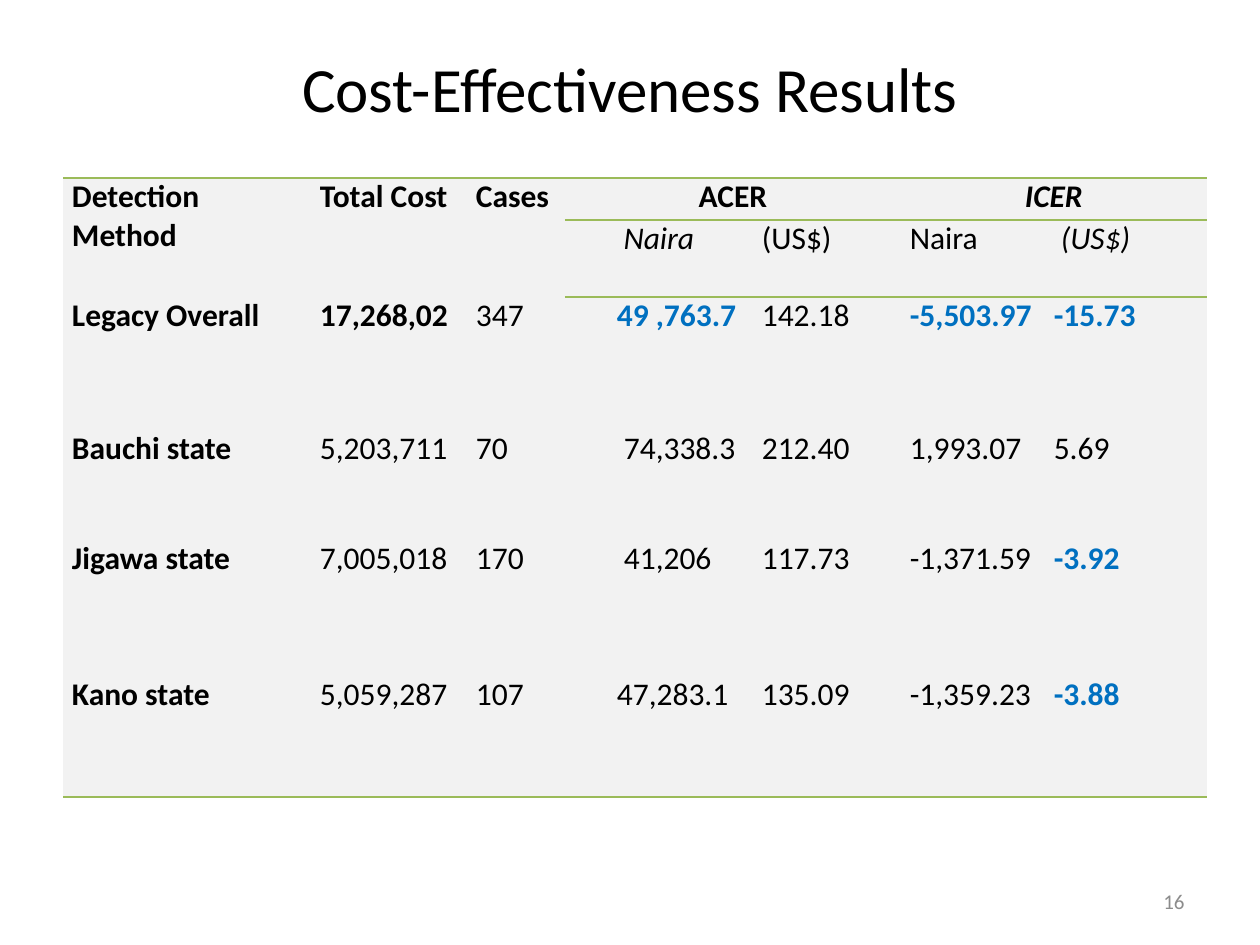
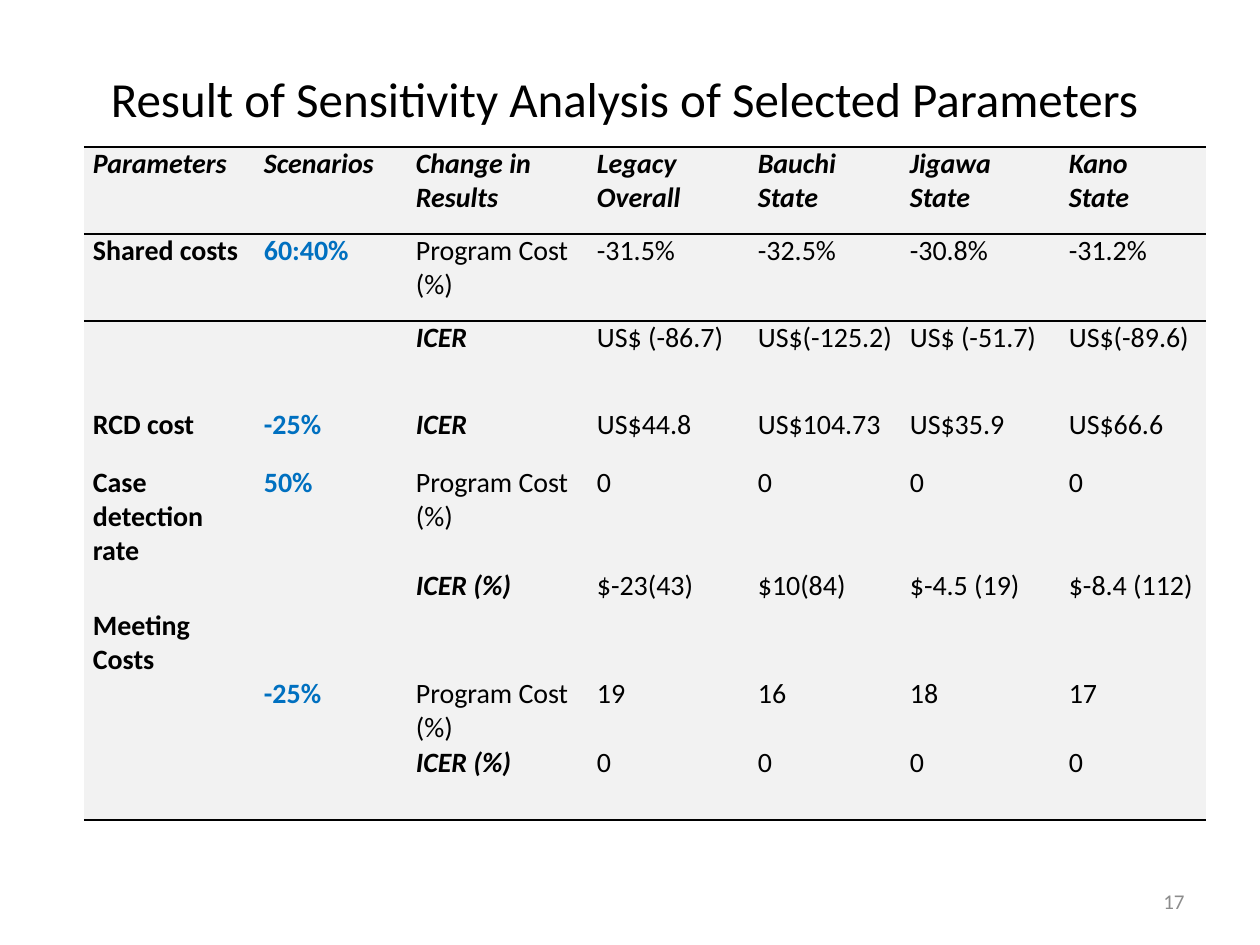
import pptx
import pptx.dml.color
import pptx.enum.text
import pptx.oxml
import pptx.oxml.ns
import pptx.util

PX = 914400 / 126
FONT = "Calibri"
BLACK, BLUE, GRAY, PALE, GREEN = "000000", "0070C0", "8C8C8C", "F2F2F2", "9BBB59"
NO_STYLE = "{2D5ABB26-0587-4C30-8999-92F81FD0307C}"
ALIGN = pptx.enum.text.PP_ALIGN
MIDDLE = pptx.enum.text.MSO_ANCHOR.MIDDLE


def px(length):
    return pptx.util.Emu(round(length * PX))


def add_run(para, text, size, color, style=""):
    run = para.add_run()
    run.text = text
    run.font.name = FONT
    run.font.size = pptx.util.Pt(size)
    run.font.bold = "b" in style
    run.font.italic = "i" in style
    run.font.color.rgb = pptx.dml.color.RGBColor.from_string(color)


# Cell text may end in "|" and style letters: b bold, i italic, u blue.
cost_rows = [
    ["Detection Method|b", "Total Cost|b", "Cases|b", "ACER|b", "", "ICER|bi", ""],
    ["", "", "", "Naira|i", "(US$)", "Naira", "(US$)|i"],
    ["Legacy Overall|b", "17,268,02|b", "347", "49 ,763.7|bu", "142.18", "-5,503.97|bu", "-15.73|bu"],
    ["Bauchi state|b", "5,203,711", "70", "74,338.3", "212.40", "1,993.07", "5.69"],
    ["Jigawa state|b", "7,005,018", "170", "41,206", "117.73", "-1,371.59", "-3.92|bu"],
    ["Kano state|b", "5,059,287", "107", "47,283.1", "135.09", "-1,359.23", "-3.88|bu"],
]
sensitivity_rows = [
    ["Parameters|bi", "Scenarios|bi", "Change in Results|bi", "Legacy\nOverall|bi",
     "Bauchi\nState|bi", "Jigawa\nState|bi", "Kano\nState|bi"],
    ["Shared costs|b", "60:40%|bu", "Program Cost (%)", "-31.5%", "-32.5%", "-30.8%", "-31.2%"],
    ["", "", "ICER|bi", "US$ (-86.7)", "US$(-125.2)", "US$ (-51.7)", "US$(-89.6)"],
    ["RCD cost|b", "-25%|bu", "ICER|bi", "US$44.8", "US$104.73", "US$35.9", "US$66.6"],
    ["Case detection rate|b", "50%|bu", "Program Cost (%)", "0", "0", "0", "0"],
    ["", "", "ICER (%)|bi", "$-23(43)", "$10(84)", "$-4.5 (19)", "$-8.4 (112)"],
    ["Meeting Costs|b", "", "", "", "", "", ""],
    ["", "-25%|bu", "Program Cost (%)", "19", "16", "18", "17"],
    ["", "", "ICER (%)|bi", "0", "0", "0", "0"],
    [""] * 7,
]
pages = [
    {
        "number": "16", "title": "Cost-Effectiveness Results", "title_size": 36, "title_height": 98,
        "left": 63, "top": 178, "size": 18, "rows": cost_rows,
        "widths": [248, 156, 98, 188, 148, 144, 162], "heights": [42, 68, 133, 110, 136, 121],
        "line": GREEN, "ruled_columns": range(3, 7), "align": ALIGN.JUSTIFY,
        "merges": [(0, 0, 1, 0), (0, 1, 1, 1), (0, 2, 1, 2), (0, 3, 0, 4), (0, 5, 0, 6)],
        "centered": [(0, 3), (0, 5), (1, 3)],
        "indents": {(1, 6): 7, (2, 3): 43, (3, 3): 50, (4, 3): 50, (5, 3): 43},
    },
    {
        "number": "17", "title": "Result of Sensitivity Analysis of Selected Parameters ",
        "title_size": 28, "title_height": 120,
        "left": 84, "top": 147, "size": 16, "rows": sensitivity_rows,
        "widths": [171, 152, 181, 161, 152, 159, 146],
        "heights": [87, 87, 87, 58, 102, 40, 68, 68, 40, 34],
        "line": BLACK, "ruled_columns": range(7), "align": ALIGN.LEFT,
        "merges": [], "centered": [], "indents": {},
    },
]

deck = pptx.Presentation()
deck.slide_width, deck.slide_height = px(1260), px(945)

for page in pages:
    slide = deck.slides.add_slide(deck.slide_layouts[5])
    title = slide.shapes.title
    title.left, title.top, title.width, title.height = px(63), px(38), px(1134), px(page["title_height"])
    title.text_frame.auto_size = pptx.enum.text.MSO_AUTO_SIZE.NONE
    title.text_frame.vertical_anchor = MIDDLE
    para = title.text_frame.paragraphs[0]
    para.alignment = ALIGN.CENTER
    add_run(para, page["title"], page["title_size"], BLACK)

    rows, widths, heights = page["rows"], page["widths"], page["heights"]
    frame = slide.shapes.add_table(len(rows), len(widths), px(page["left"]), px(page["top"]),
                                   px(sum(widths)), px(sum(heights)))
    table = frame.table
    table.first_row = table.horz_banding = False
    table._tbl.tblPr.find(pptx.oxml.ns.qn("a:tableStyleId")).text = NO_STYLE
    for column, width in zip(table.columns, widths):
        column.width = px(width)
    for row, height in zip(table.rows, heights):
        row.height = px(height)

    for row_index, row in enumerate(rows):
        for column_index, entry in enumerate(row):
            place = (row_index, column_index)
            cell = table.cell(*place)
            cell.margin_left = cell.margin_right = px(9)
            cell.margin_top = cell.margin_bottom = 0

            edges = []
            ruled = column_index in page["ruled_columns"]
            if row_index == 0 or row_index == 1 and ruled:
                edges.append("lnT")
            if row_index == len(rows) - 1 or row_index == 0 and ruled:
                edges.append("lnB")
            for edge in edges:
                cell._tc.get_or_add_tcPr().append(pptx.oxml.parse_xml(
                    f'<a:{edge} {pptx.oxml.ns.nsdecls("a")} w="12700"><a:solidFill>'
                    f'<a:srgbClr val="{page["line"]}"/></a:solidFill></a:{edge}>'))
            cell.fill.solid()
            cell.fill.fore_color.rgb = pptx.dml.color.RGBColor.from_string(PALE)

            text, _, style = entry.partition("|")
            for line_index, line in enumerate(text.split("\n")):
                text_frame = cell.text_frame
                para = text_frame.add_paragraph() if line_index else text_frame.paragraphs[0]
                para.alignment = ALIGN.CENTER if place in page["centered"] else page["align"]
                if place in page["indents"]:
                    para.alignment = ALIGN.LEFT
                    para._p.get_or_add_pPr().set("marL", str(px(page["indents"][place])))
                if line:
                    add_run(para, line, page["size"], BLUE if "u" in style else BLACK, style)
                else:
                    para._p.get_or_add_endParaRPr().set("sz", str(page["size"] * 100))

    for first_row, first_column, last_row, last_column in page["merges"]:
        table.cell(first_row, first_column).merge(table.cell(last_row, last_column))

    box = slide.shapes.add_textbox(px(903), px(876), px(294), px(50))
    box.text_frame.word_wrap = True
    box.text_frame.vertical_anchor = MIDDLE
    para = box.text_frame.paragraphs[0]
    para.alignment = ALIGN.RIGHT
    add_run(para, page["number"], 12, GRAY)

deck.save("out.pptx")
